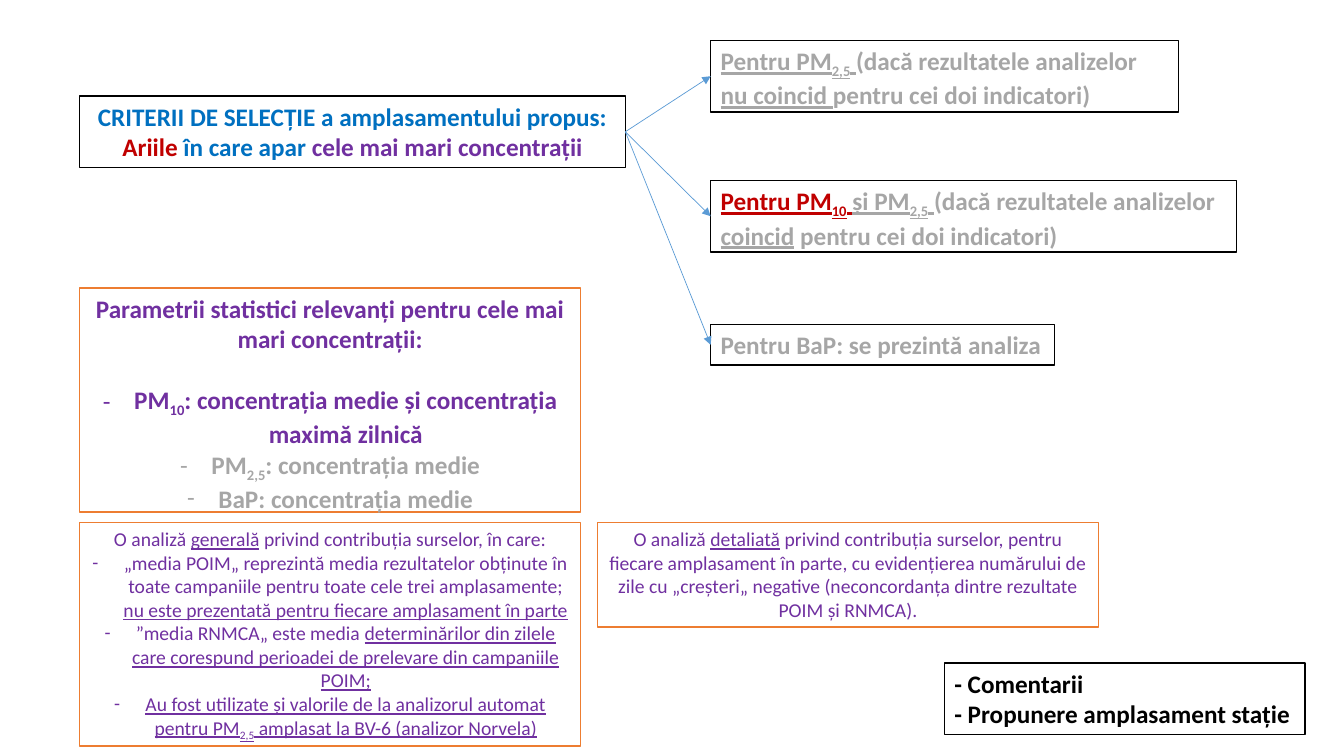
from dataclasses import dataclass

from lxml.etree import SubElement
from pptx import Presentation
from pptx.dml.color import RGBColor
from pptx.enum.shapes import MSO_CONNECTOR, MSO_SHAPE
from pptx.enum.text import MSO_ANCHOR, PP_ALIGN
from pptx.oxml.ns import qn
from pptx.util import Cm, Pt


@dataclass(frozen=True)
class Theme:
    font: str = "Calibri"
    black: str = "000000"
    white: str = "FFFFFF"
    blue: str = "0070C0"
    red: str = "C00000"
    purple: str = "7030A0"
    gray: str = "A6A6A6"
    orange: str = "ED7D31"
    arrow: str = "5B9BD5"
    large: int = 18
    small: int = 14
    edge: float = 1
    thin: float = 0.5


theme = Theme()


def paint(color):
    return RGBColor.from_string(color)


def write(para, runs, size=theme.large, color=theme.black, bold=True,
          align=PP_ALIGN.LEFT, bullet=False, after=0):
    para.alignment = align
    para.space_after = Pt(after)
    if bullet:
        props = para._p.get_or_add_pPr()
        props.set("marL", str(Cm(0.79)))
        props.set("indent", str(-Cm(0.79)))
        SubElement(props, qn("a:buFont")).set("typeface", theme.font)
        SubElement(props, qn("a:buChar")).set("char", "-")
    for text, *marks in runs:
        run = para.add_run()
        run.text = text
        font = run.font
        font.name, font.size, font.bold = theme.font, Pt(size), bold
        font.underline = "u" in marks
        tints = [mark for mark in marks if mark not in ("u", "sub")]
        font.color.rgb = paint(tints[0] if tints else color)
        if "sub" in marks:
            font._element.set("baseline", "-25000")


def panel(slide, box, line=theme.black):
    shape = slide.shapes.add_shape(MSO_SHAPE.RECTANGLE, *map(Cm, box))
    shape.shadow.inherit = False
    shape.fill.solid()
    shape.fill.fore_color.rgb = paint(theme.white)
    shape.line.color.rgb = paint(line)
    shape.line.width = Pt(theme.edge)
    shape.text_frame.word_wrap = True
    shape.text_frame.vertical_anchor = MSO_ANCHOR.TOP
    return shape


def fill(shape, paras, **style):
    frame = shape.text_frame
    for index, (runs, extra) in enumerate(paras):
        para = frame.add_paragraph() if index else frame.paragraphs[0]
        write(para, runs, **{**style, **extra})


def arrow(slide, start, end):
    line = slide.shapes.add_connector(
        MSO_CONNECTOR.STRAIGHT,
        start.left + start.width, start.top + start.height // 2,
        end.left, end.top + end.height // 2)
    line.line.color.rgb = paint(theme.arrow)
    line.line.width = Pt(theme.thin)
    SubElement(line.line._get_or_add_ln(), qn("a:tailEnd")).set("type", "triangle")
    SubElement(line._element.spPr, qn("a:effectLst"))


def choices(slide, box):
    left, top, width, height = box
    root = panel(slide, (left, top + 1.4, 13.75, 1.8))
    fill(root, [
        ([("CRITERII DE SELECȚIE a amplasamentului propus:",)], {}),
        ([("Ariile", theme.red), (" în care apar ",),
          ("cele mai mari concentrații", theme.purple)], {}),
    ], color=theme.blue, align=PP_ALIGN.CENTER)
    cases = [
        (0, 11.79, 1.8,
         [("Pentru PM", "u"), ("2,5", "u", "sub"), (" ", "u"),
          ("(dacă rezultatele analizelor ",), ("nu coincid ", "u"),
          ("pentru cei doi indicatori)",)]),
        (3.53, 13.26, 1.8,
         [("Pentru PM", "u", theme.red), ("10", "u", "sub", theme.red),
          (" ", "u", theme.red), ("și PM", "u"), ("2,5", "u", "sub"),
          (" ", "u"), ("(dacă rezultatele analizelor ",), ("coincid", "u"),
          (" pentru cei doi indicatori)",)]),
        (7.16, 8.66, 1.02, [("Pentru BaP: se prezintă analiza",)]),
    ]
    for drop, wide, high, runs in cases:
        case = panel(slide, (left + width - 13.26, top + drop, wide, high))
        fill(case, [(runs, {})], color=theme.gray)
        arrow(slide, root, case)


def stats(slide, box):
    gray = {"color": theme.gray, "bullet": True}
    fill(panel(slide, box, theme.orange), [
        ([("Parametrii statistici relevanți pentru cele mai mari concentrații:",)],
         {"after": 22}),
        ([("PM",), ("10", "sub"),
          (": concentrația medie și concentrația maximă zilnică",)],
         {"bullet": True}),
        ([("PM",), ("2,5", "sub"), (": concentrația medie",)], gray),
        ([("BaP: concentrația medie",)], gray),
    ], color=theme.purple, align=PP_ALIGN.CENTER)


def sources(slide, box):
    left, top, width, height = box
    gap = 0.43
    half = (width - gap) / 2
    style = dict(size=theme.small, color=theme.purple, bold=False,
                 align=PP_ALIGN.CENTER)
    item = {"bullet": True}
    fill(panel(slide, (left, top, half, height), theme.orange), [
        ([("O analiză ",), ("generală", "u"),
          (" privind contribuția surselor, în care:",)], {}),
        ([("„media POIM„ reprezintă media rezultatelor obținute în toate "
           "campaniile pentru toate cele trei amplasamente; ",),
          ("nu este prezentată pentru fiecare amplasament în parte", "u")], item),
        ([("”media RNMCA„ este media ",),
          ("determinărilor din zilele care corespund perioadei de prelevare "
           "din campaniile POIM;", "u")], item),
        ([("Au fost utilizate și valorile de la analizorul automat pentru PM", "u"),
          ("2,5", "u", "sub"),
          (" amplasat la BV-6 (analizor Norvela)", "u")], item),
    ], **style)
    fill(panel(slide, (left + half + gap, top, half, 2.64), theme.orange), [
        ([("O analiză ",), ("detaliată", "u"),
          (" privind contribuția surselor, pentru fiecare amplasament în parte, "
           "cu evidențierea numărului de zile cu „creșteri„ negative "
           "(neconcordanța dintre rezultate POIM și RNMCA).",)], {}),
    ], **style)


def notes(slide, box):
    fill(panel(slide, box), [
        ([("- Comentarii",)], {}),
        ([("- Propunere amplasament stație",)], {}),
    ])


def main():
    deck = Presentation()
    deck.slide_width, deck.slide_height = Cm(33.87), Cm(19.05)
    slide = deck.slides.add_slide(deck.slide_layouts[6])
    choices(slide, (2.01, 1.02, 29.16, 8.18))
    stats(slide, (2.01, 7.26, 12.62, 5.64))
    sources(slide, (2.01, 13.16, 25.67, 5.64))
    notes(slide, (23.8, 16.71, 9.09, 1.8))
    deck.save("out.pptx")


if __name__ == "__main__":
    main()
